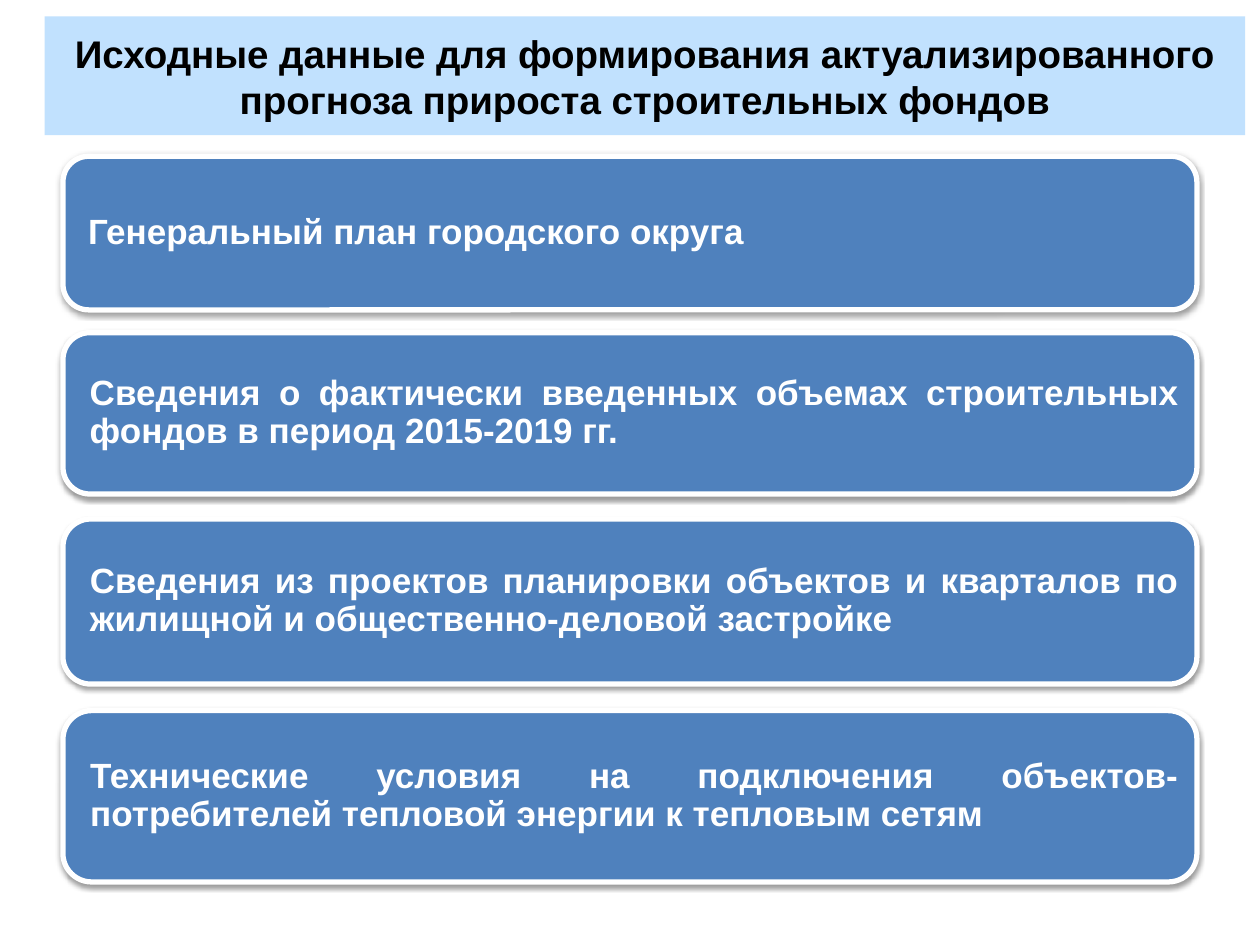
from dataclasses import dataclass

from lxml import etree
from pptx import Presentation
from pptx.dml.color import RGBColor
from pptx.enum.shapes import MSO_SHAPE
from pptx.enum.text import MSO_ANCHOR, PP_ALIGN
from pptx.oxml.ns import qn
from pptx.shapes.autoshape import Shape
from pptx.slide import Slide
from pptx.util import Pt

RECT, ROUND = MSO_SHAPE.RECTANGLE, MSO_SHAPE.ROUNDED_RECTANGLE
MIDDLE = MSO_ANCHOR.MIDDLE
CENTER, JUSTIFY = PP_ALIGN.CENTER, PP_ALIGN.JUSTIFY


@dataclass(frozen=True)
class Theme:
    font: str = "Arial"
    band: str = "C1E1FE"
    card: str = "4F81BD"
    light: str = "FFFFFF"
    dark: str = "000000"
    title: float = 22
    body: float = 20


@dataclass(frozen=True)
class Card:
    top: float
    height: float
    inset: float
    text: str


THEME = Theme()
LEFT, WIDTH = 36, 648

CARDS = [
    Card(89.3, 87.8, 10.1, "Генеральный план городского округа"),
    Card(190.1, 92.2, 10.8, "Сведения о фактически введенных объемах "
         "строительных фондов в период 2015-2019 гг."),
    Card(296.6, 94.3, 10.8, "Сведения из проектов планировки объектов и "
         "кварталов по жилищной и общественно-деловой застройке"),
    Card(406.1, 97.9, 10.8, "Технические условия на подключения "
         "объектов-потребителей тепловой энергии к тепловым сетям"),
]


def add_box(slide: Slide, kind: MSO_SHAPE, box: tuple, fill: str) -> Shape:
    shape = slide.shapes.add_shape(kind, *map(Pt, box))
    shape.shadow.inherit = False
    shape.fill.solid()
    shape.fill.fore_color.rgb = RGBColor.from_string(fill)
    shape.line.fill.background()
    return shape


def add_text(shape: Shape, text: str, size: float, color: str,
             align: PP_ALIGN) -> None:
    frame = shape.text_frame
    frame.word_wrap = True
    frame.vertical_anchor = MIDDLE
    para = frame.paragraphs[0]
    para.alignment = align
    run = para.add_run()
    run.text = text
    run.font.name = THEME.font
    run.font.size = Pt(size)
    run.font.bold = True
    run.font.color.rgb = RGBColor.from_string(color)


def add_shade(shape: Shape) -> None:
    """Soft shadow falling straight down."""
    effects = shape._element.spPr.find(qn("a:effectLst"))
    shade = etree.SubElement(
        effects, qn("a:outerShdw"), blurRad=str(Pt(3.1)),
        dist=str(Pt(1.6)), dir="5400000", rotWithShape="0")
    color = etree.SubElement(shade, qn("a:srgbClr"), val=THEME.dark)
    etree.SubElement(color, qn("a:alpha"), val="38000")


def add_card(slide: Slide, card: Card) -> None:
    shape = add_box(slide, ROUND, (LEFT, card.top, WIDTH, card.height),
                    THEME.card)
    shape.adjustments[0] = 0.167
    shape.line.color.rgb = RGBColor.from_string(THEME.light)
    shape.line.width = Pt(3)
    add_shade(shape)
    add_text(shape, card.text, THEME.body, THEME.light, JUSTIFY)
    frame = shape.text_frame
    frame.margin_left = frame.margin_top = frame.margin_bottom = Pt(card.inset)
    frame.margin_right = Pt(5.8)
    para = frame.paragraphs[0]
    para.line_spacing = 0.9
    para.space_after = Pt(7)


def main() -> None:
    deck = Presentation()
    deck.slide_width, deck.slide_height = Pt(720), Pt(540)
    slide = deck.slides.add_slide(deck.slide_layouts[6])

    # Source data cards
    for card in CARDS:
        add_card(slide, card)

    # Title band
    band = add_box(slide, RECT, (25.5, 9.3, 686, 68), THEME.band)
    add_text(band, "Исходные данные для формирования актуализированного "
             "прогноза прироста строительных фондов",
             THEME.title, THEME.dark, CENTER)

    deck.save("out.pptx")


if __name__ == "__main__":
    main()
